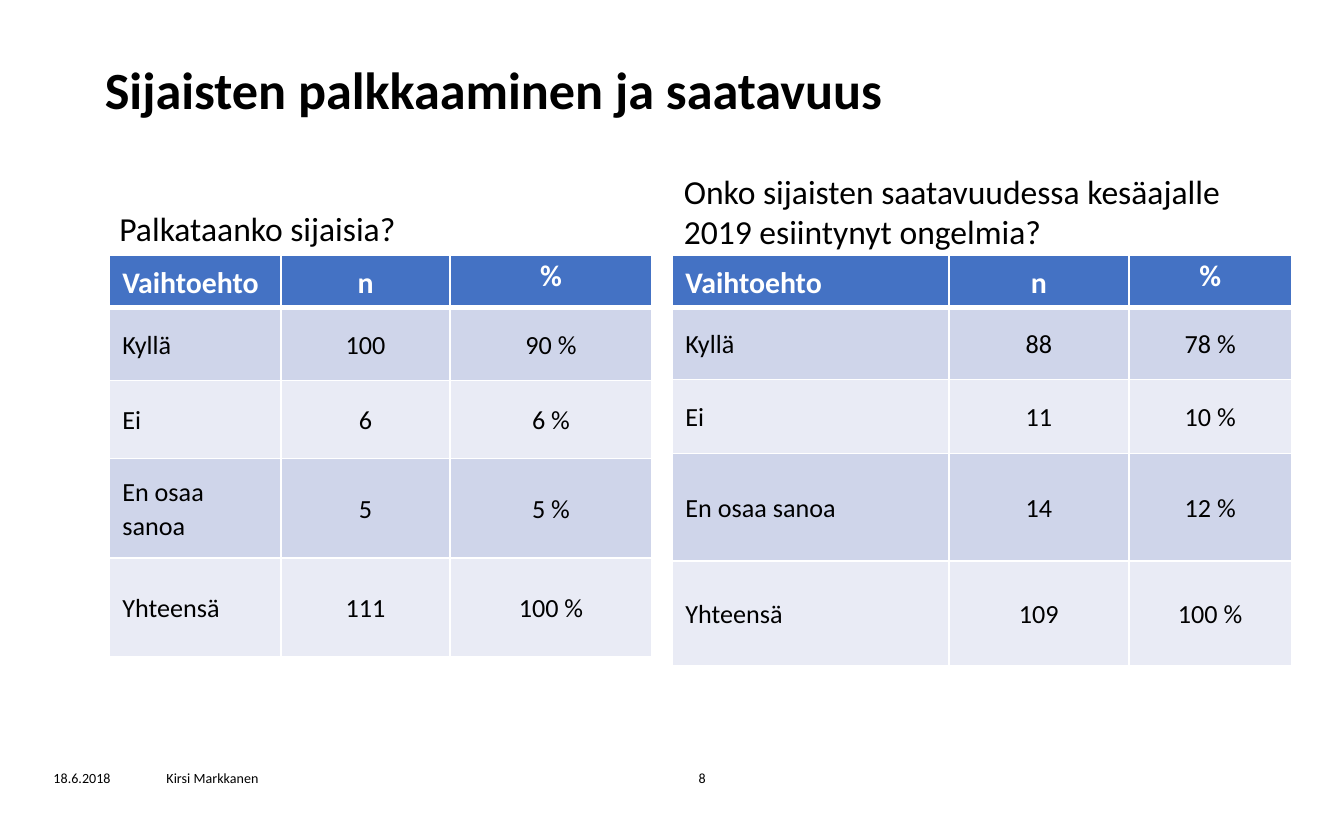
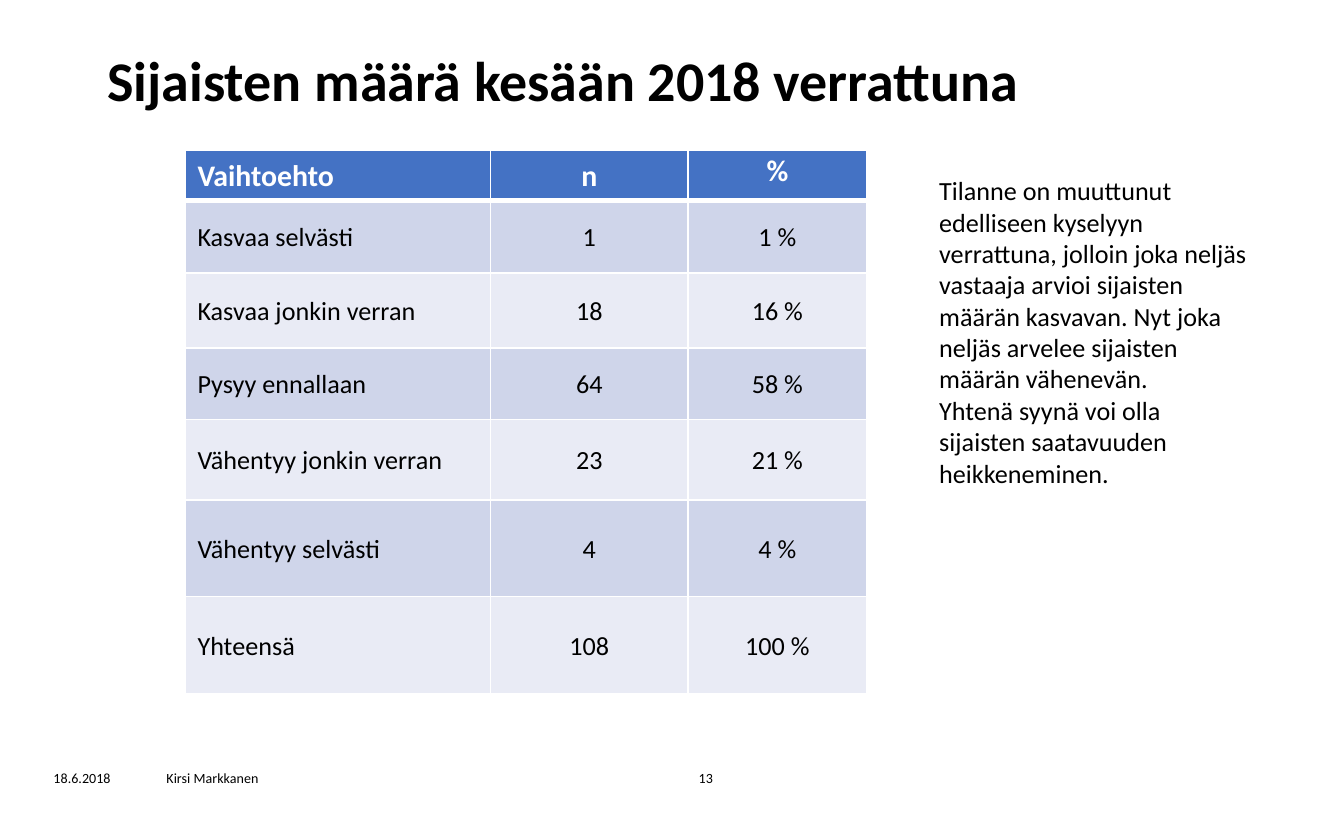
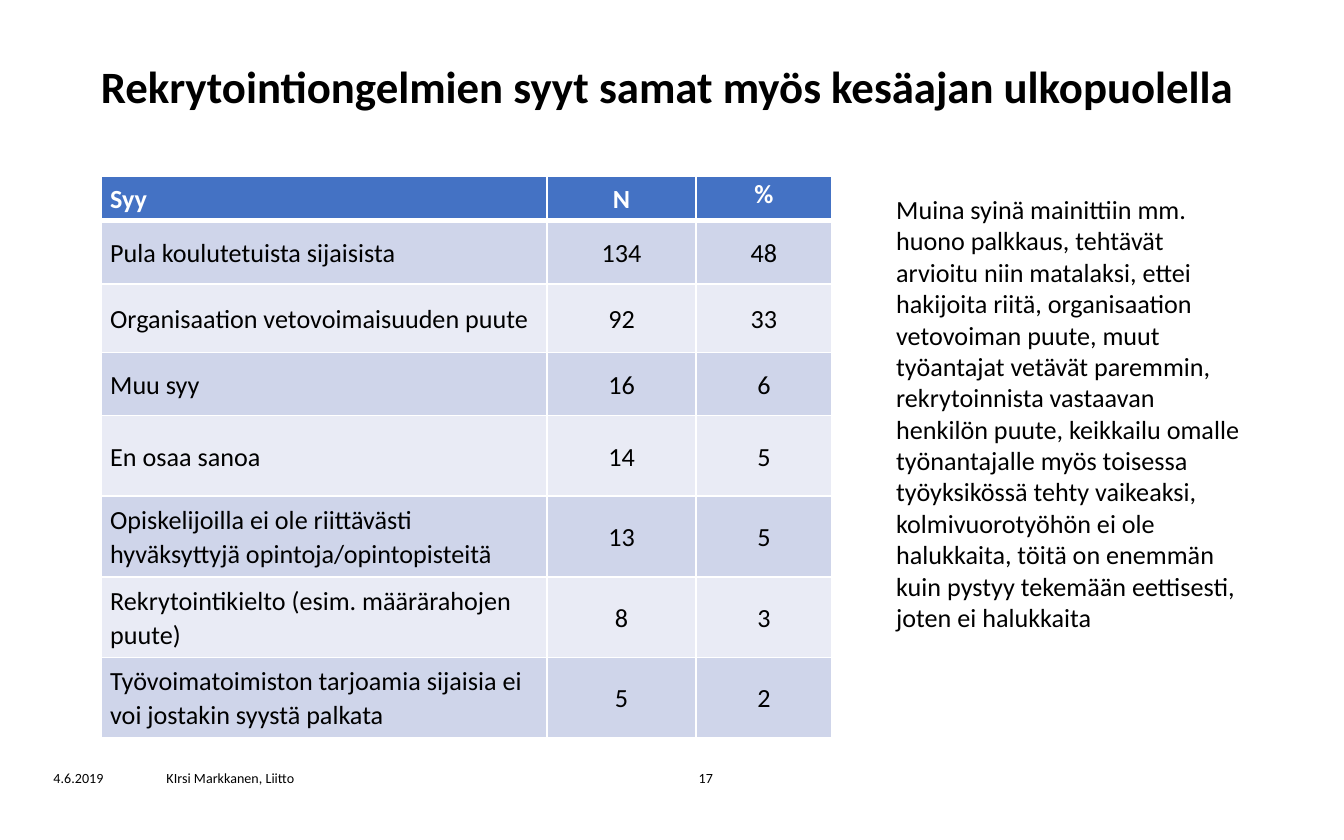
from lxml.etree import SubElement
from pptx import Presentation
from pptx.dml.color import RGBColor
from pptx.enum.text import MSO_ANCHOR as Anchor, MSO_AUTO_SIZE as AutoSize, PP_ALIGN as Align
from pptx.oxml.ns import qn
from pptx.util import Emu, Pt

PX = 9144
FONT = "Calibri"
BLACK = RGBColor(0x00, 0x00, 0x00)
WHITE = RGBColor(0xFF, 0xFF, 0xFF)
HEADER = RGBColor(0x44, 0x72, 0xC4)
BANDS = (RGBColor(0xCF, 0xD5, 0xEA), RGBColor(0xE9, 0xEB, 0xF5))
TITLE_ONLY = 5


def px(n):
    return Emu(n * PX)


class Deck:
    def __init__(self):
        self.prs = Presentation()
        self.prs.slide_width, self.prs.slide_height = px(1000), px(625)
        self.s = None

    def style(self, p, size, color=BLACK, bold=False):
        for r in p.runs:
            f = r.font
            f.name, f.size, f.bold = FONT, Pt(size), bold
            f.color.rgb = color

    def slide(self, title, x, y, h, size, date, author, number):
        self.s = self.prs.slides.add_slide(self.prs.slide_layouts[TITLE_ONLY])
        self.footer(date, author, number)
        sp = self.s.shapes.title
        sp.left, sp.top, sp.width, sp.height = px(x), px(y), px(862), px(h)
        tf = sp.text_frame
        tf.text = title
        tf.word_wrap, tf.auto_size = True, AutoSize.NONE
        tf.vertical_anchor = Anchor.MIDDLE
        tf.margin_left, tf.margin_right = px(0), px(10)
        tf.margin_top = tf.margin_bottom = px(5)
        p = tf.paragraphs[0]
        p.alignment, p.line_spacing = Align.LEFT, 0.9
        self.style(p, size, bold=True)

    def text(self, text, x, y, w, h, size, fit=AutoSize.SHAPE_TO_FIT_TEXT):
        tf = self.s.shapes.add_textbox(px(x), px(y), px(w), px(h)).text_frame
        tf.text = text
        tf.word_wrap, tf.auto_size = True, fit
        for p in tf.paragraphs:
            self.style(p, size)

    def footer(self, date, author, number):
        for text, x, w in ((date, 30, 80), (author, 114, 392), (number, 510, 50)):
            self.text(text, x, 568, w, 33, 7.5, AutoSize.NONE)

    def borders(self, cell, row):
        tcPr = cell._tc.get_or_add_tcPr()
        widths = {"L": 1, "R": 1, "T": 3 if row == 1 else 1, "B": 3 if row == 0 else 1}
        for side, width in widths.items():
            ln = SubElement(tcPr, qn(f"a:ln{side}"), w=str(Pt(width)))
            fill = SubElement(ln, qn("a:solidFill"))
            SubElement(fill, qn("a:srgbClr"), val=str(WHITE))

    def cell(self, cell, text, row, col, size, margins):
        self.borders(cell, row)
        head = row == 0
        cell.fill.solid()
        cell.fill.fore_color.rgb = HEADER if head else BANDS[(row - 1) % 2]
        side, edge = (0, 0) if head and col == 2 else margins
        cell.margin_left = cell.margin_right = px(side)
        cell.margin_top = cell.margin_bottom = px(edge)
        cell.vertical_anchor = Anchor.TOP if head else Anchor.MIDDLE
        cell.text = text
        p = cell.text_frame.paragraphs[0]
        p.alignment = Align.CENTER if col else Align.LEFT
        p.line_spacing, p.space_after = 1.07, Pt(8)
        self.style(p, size if head else 14, WHITE if head else BLACK, head)

    def table(self, x, y, cols, heights, rows, size=16, margins=(10, 5)):
        frame = self.s.shapes.add_table(len(rows), len(cols), px(x), px(y),
                                        px(sum(cols)), px(sum(heights)))
        tbl = frame.table
        for col, w in zip(tbl.columns, cols):
            col.width = px(w)
        for i, (h, row) in enumerate(zip(heights, rows)):
            tbl.rows[i].height = px(h)
            for j, text in enumerate(row):
                self.cell(tbl.cell(i, j), text, i, j, size, margins)


def main():
    d = Deck()
    head = ("Vaihtoehto", "n", "%")

    d.slide("Sijaisten palkkaaminen ja saatavuus", 78, 34, 70, 28,
            "18.6.2018", "Kirsi Markkanen", "8")
    d.table(81, 190, (128, 126, 150), (34, 54, 58, 74, 74), (
        head,
        ("Kyllä", "100", "90 %"),
        ("Ei", "6", "6 %"),
        ("En osaa sanoa", "5", "5 %"),
        ("Yhteensä", "111", "100 %"),
    ))
    d.text("Palkataanko sijaisia?", 79, 150, 414, 40, 18)
    d.table(500, 190, (206, 134, 121), (36, 54, 55, 80, 78), (
        head,
        ("Kyllä", "88", "78 %"),
        ("Ei", "11", "10 %"),
        ("En osaa sanoa", "14", "12 %"),
        ("Yhteensä", "109", "100 %"),
    ))
    d.text("Onko sijaisten saatavuudessa kesäajalle 2019 esiintynyt ongelmia?",
           499, 122, 460, 71, 18)

    d.slide("Sijaisten määrä kesään 2018 verrattuna", 80, 27, 70, 30,
            "18.6.2018", "Kirsi Markkanen", "13")
    d.table(138, 112, (227, 147, 133), (26, 54, 56, 53, 60, 72, 72), (
        head,
        ("Kasvaa selvästi", "1", "1 %"),
        ("Kasvaa jonkin verran", "18", "16 %"),
        ("Pysyy ennallaan", "64", "58 %"),
        ("Vähentyy jonkin verran", "23", "21 %"),
        ("Vähentyy selvästi", "4", "4 %"),
        ("Yhteensä", "108", "100 %"),
    ), margins=(9, 4))
    d.text("Tilanne on muuttunut edelliseen kyselyyn verrattuna, jolloin joka neljäs "
           "vastaaja arvioi sijaisten määrän kasvavan. Nyt joka neljäs arvelee "
           "sijaisten määrän vähenevän.\n"
           "Yhtenä syynä voi olla sijaisten saatavuuden heikkeneminen.",
           689, 125, 253, 246, 14)

    d.slide("Rekrytointiongelmien syyt samat myös kesäajan ulkopuolella", 75, 33, 67, 24,
            "4.6.2019", "KIrsi Markkanen, Liitto", "17")
    d.table(75, 131, (332, 111, 101), (21, 47, 51, 47, 60, 60, 60, 60), (
        ("Syy", "N", "%"),
        ("Pula koulutetuista sijaisista", "134", "48"),
        ("Organisaation vetovoimaisuuden puute", "92", "33"),
        ("Muu syy", "16", "6"),
        ("En osaa sanoa", "14", "5"),
        ("Opiskelijoilla ei ole riittävästi hyväksyttyjä opintoja/opintopisteitä", "13", "5"),
        ("Rekrytointikielto (esim. määrärahojen puute)", "8", "3"),
        ("Työvoimatoimiston tarjoamia sijaisia ei voi jostakin syystä palkata", "5", "2"),
    ), size=14, margins=(7, 4))
    d.text("Muina syinä mainittiin mm. huono palkkaus, tehtävät arvioitu niin matalaksi, "
           "ettei hakijoita riitä, organisaation vetovoiman puute, muut työantajat "
           "vetävät paremmin, rekrytoinnista vastaavan henkilön puute, keikkailu omalle "
           "työnantajalle myös toisessa työyksikössä tehty vaikeaksi, kolmivuorotyöhön "
           "ei ole halukkaita, töitä on enemmän kuin pystyy tekemään eettisesti, joten "
           "ei halukkaita", 657, 139, 280, 340, 14)

    d.prs.save("out.pptx")


if __name__ == "__main__":
    main()
